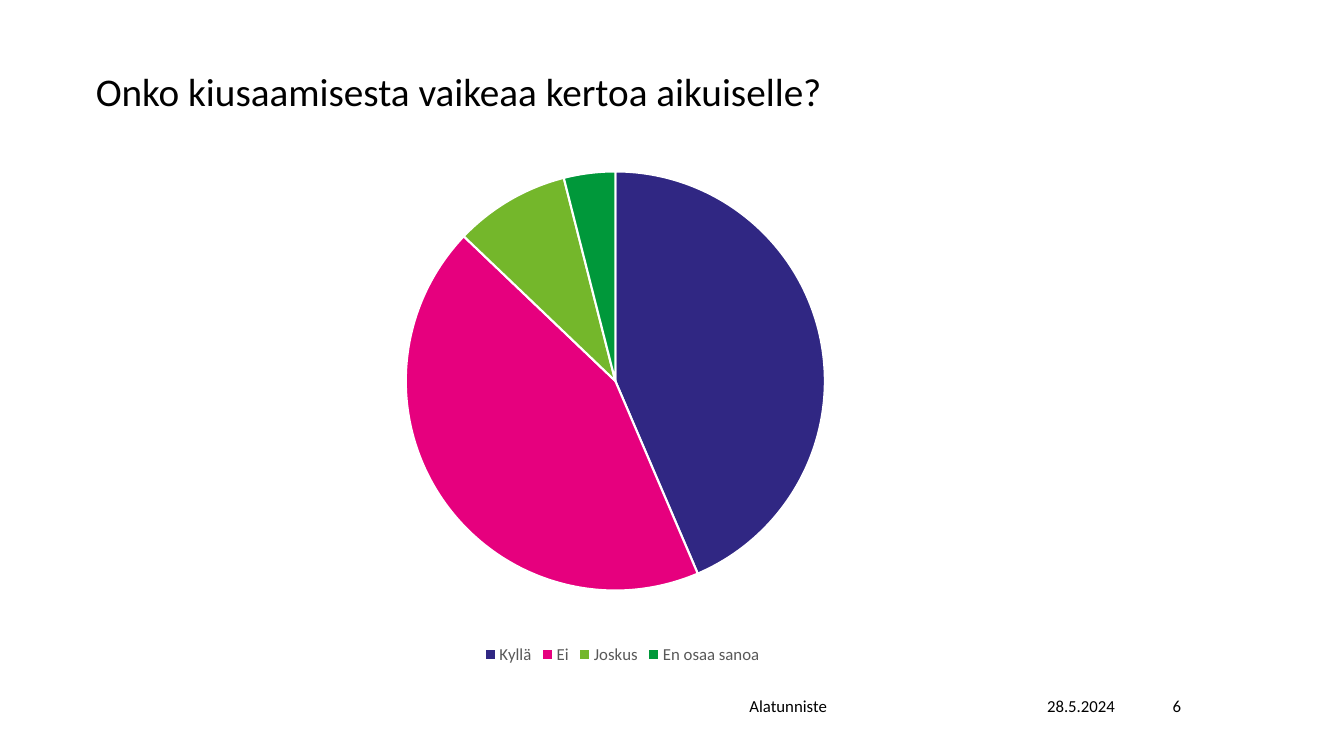
from lxml import etree
from pptx import Presentation
from pptx.chart.data import CategoryChartData
from pptx.dml.color import RGBColor
from pptx.enum.chart import XL_CHART_TYPE, XL_LEGEND_POSITION
from pptx.enum.text import MSO_ANCHOR, MSO_AUTO_SIZE, PP_ALIGN
from pptx.oxml.ns import qn
from pptx.util import Cm, Pt

PIE = XL_CHART_TYPE.PIE
LEGEND_BOTTOM = XL_LEGEND_POSITION.BOTTOM
BOTTOM, MIDDLE = MSO_ANCHOR.BOTTOM, MSO_ANCHOR.MIDDLE
NO_AUTOFIT = MSO_AUTO_SIZE.NONE
LEFT, CENTER, RIGHT = PP_ALIGN.LEFT, PP_ALIGN.CENTER, PP_ALIGN.RIGHT

TITLE_ONLY_LAYOUT = 5
FONT = "Calibri"
BLACK, GREY, WHITE = "000000", "595959", "FFFFFF"
FOOTER_TOP, FOOTER_HEIGHT = 17.27, 1.02

# answer, share in percent, slice colour
ANSWERS = [
    ("Kyllä", 44, "302783"),
    ("Ei", 44, "E6007E"),
    ("Joskus", 9, "74B72B"),
    ("En osaa sanoa", 4, "00983A"),
]
# text, left, width, alignment
FOOTERS = [
    ("Alatunniste", 14.15, 11.43, CENTER),
    ("28.5.2024", 25.91, 2.67, CENTER),
    ("6", 28.88, 1.14, RIGHT),
]
PLOT_LAYOUT = {"x": 0.27, "y": 0.028, "w": 0.446, "h": 0.82}


def rgb(color):
    return RGBColor.from_string(color)


def set_font(font, size, color=BLACK):
    font.name = FONT
    font.size = Pt(size)
    font.color.rgb = rgb(color)


def write_text(box, text, size, align, anchor):
    frame = box.text_frame
    frame.text = text
    frame.word_wrap = True
    frame.auto_size = NO_AUTOFIT
    frame.vertical_anchor = anchor
    para = frame.paragraphs[0]
    para.alignment = align
    set_font(para.font, size)
    return para


def add_title(page, text):
    title = page.shapes.title
    title.left, title.top = Cm(2.16), Cm(2.01)
    title.width, title.height = Cm(28.5), Cm(1.02)
    para = write_text(title, text, 28, LEFT, BOTTOM)
    para.line_spacing = 0.9


def add_footer(page, text, left, width, align):
    box = page.shapes.add_textbox(Cm(left), Cm(FOOTER_TOP), Cm(width), Cm(FOOTER_HEIGHT))
    write_text(box, text, 12, align, MIDDLE)


def place_plot(chart):
    """Fix the inner plot area as fractions of the chart."""
    plot_area = chart.plots[0]._element.getparent()
    layout = plot_area.find(qn("c:layout"))
    if layout is None:
        layout = etree.Element(qn("c:layout"))
        plot_area.insert(0, layout)
    manual = etree.SubElement(layout, qn("c:manualLayout"))
    settings = {"layoutTarget": "inner", "xMode": "edge", "yMode": "edge", **PLOT_LAYOUT}
    for name, value in settings.items():
        etree.SubElement(manual, qn(f"c:{name}")).set("val", str(value))


def add_pie(page, answers):
    data = CategoryChartData()
    data.categories = [name for name, _, _ in answers]
    data.add_series("Series 1", [share for _, share, _ in answers])
    chart = page.shapes.add_chart(PIE, Cm(3), Cm(3.96), Cm(25.37), Cm(12.88), data).chart
    set_font(chart.font, 10)
    chart.has_title = False
    chart.has_legend = True
    chart.legend.position = LEGEND_BOTTOM
    chart.legend.include_in_layout = False
    set_font(chart.legend.font, 12, GREY)

    plot = chart.plots[0]
    plot.vary_by_categories = True
    for index, (_, _, color) in enumerate(answers):
        slice_format = plot.series[0].points[index].format
        slice_format.fill.solid()
        slice_format.fill.fore_color.rgb = rgb(color)
        slice_format.line.color.rgb = rgb(WHITE)
        slice_format.line.width = Pt(1.5)
    place_plot(chart)


def main():
    deck = Presentation()
    deck.slide_width, deck.slide_height = Cm(33.87), Cm(19.05)
    page = deck.slides.add_slide(deck.slide_layouts[TITLE_ONLY_LAYOUT])
    add_title(page, "Onko kiusaamisesta vaikeaa kertoa aikuiselle?")
    add_pie(page, ANSWERS)
    for footer in FOOTERS:
        add_footer(page, *footer)
    deck.save("out.pptx")


if __name__ == "__main__":
    main()
